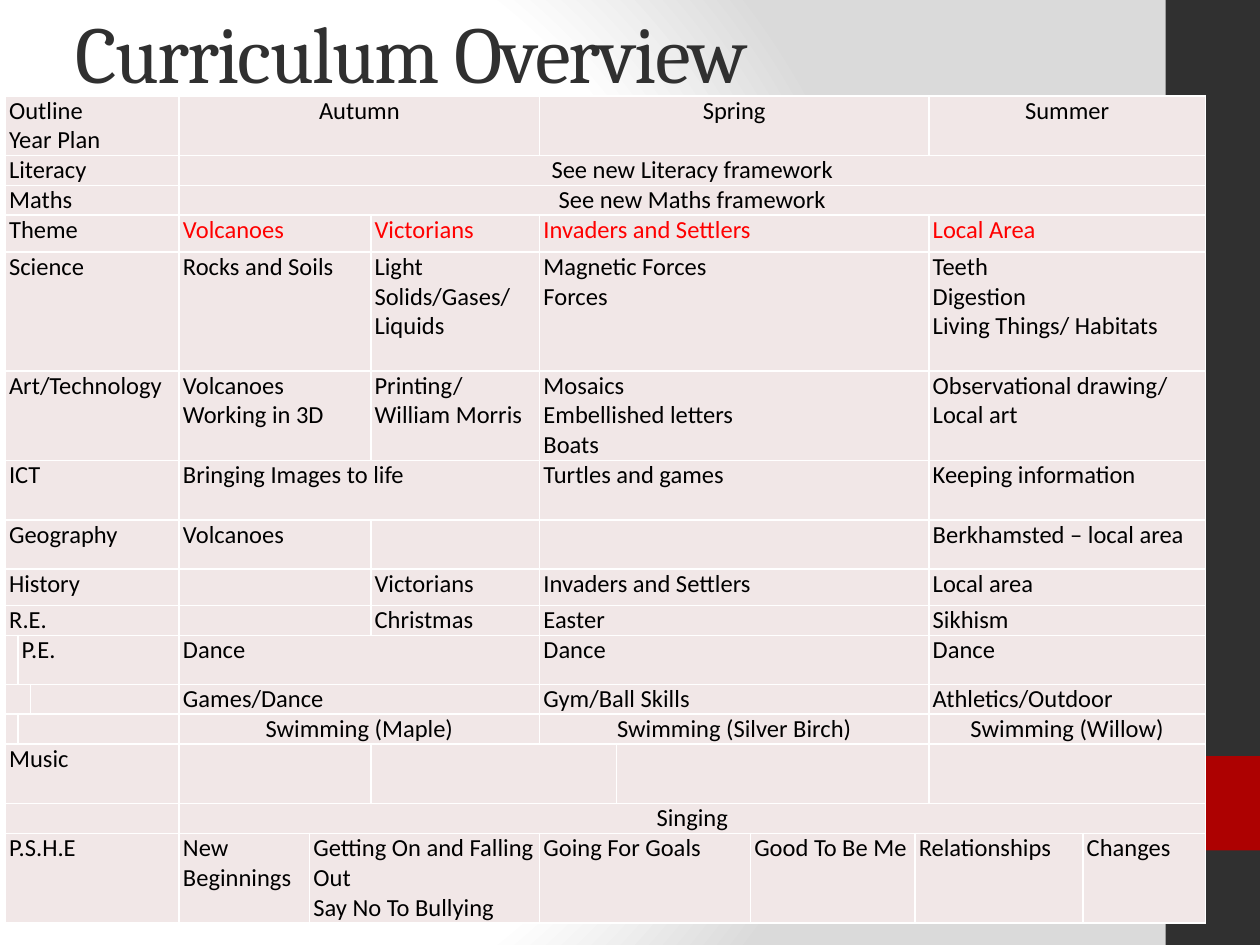
from lxml import etree
from pptx import Presentation
from pptx.dml.color import RGBColor
from pptx.enum.shapes import MSO_SHAPE
from pptx.enum.text import MSO_ANCHOR, MSO_AUTO_SIZE, PP_ALIGN
from pptx.oxml import parse_xml
from pptx.oxml.ns import nsdecls, qn
from pptx.util import Pt

RECT = MSO_SHAPE.RECTANGLE
MIDDLE = MSO_ANCHOR.MIDDLE
NO_FIT = MSO_AUTO_SIZE.NONE
LEFT, CENTER = PP_ALIGN.LEFT, PP_ALIGN.CENTER

COLORS = {"dark": "303030", "accent": "AD0101", "cell": "F1E7E7", "text": "000000",
          "theme": "FF0000", "white": "FFFFFF", "grey": "DADADA"}

# Column widths, and the columns at which the cells of a row start
WIDTHS = [5.5, 4, 85, 74.5, 35, 96.5, 44, 76.5, 94, 8, 88, 70]
YEAR = [0, 3]
TERMS = [0, 3, 6, 10]
HALVES = [0, 3, 5, 6, 10]

# Row: height, cell starts, texts, alignment and colour after the first column
ROWS = [
    (34, TERMS, ["Outline\nYear Plan", "Autumn", "Spring", "Summer"], CENTER, "text"),
    (17, YEAR, ["Literacy", "See new Literacy framework"], CENTER, "text"),
    (17, YEAR, ["Maths", "See new Maths framework"], CENTER, "text"),
    (21, HALVES, ["Theme", "Volcanoes", "Victorians", "Invaders and Settlers",
                  "Local Area"], LEFT, "theme"),
    (68, HALVES, ["Science", "Rocks and Soils", "Light\nSolids/Gases/\nLiquids",
                  "Magnetic Forces\nForces",
                  "Teeth\nDigestion\nLiving Things/ Habitats"], LEFT, "text"),
    (51, HALVES, ["Art/Technology", "Volcanoes\nWorking in 3D",
                  "Printing/\nWilliam Morris", "Mosaics\nEmbellished letters\nBoats",
                  "Observational drawing/\nLocal art"], LEFT, "text"),
    (34, TERMS, ["ICT", "Bringing Images to life", "Turtles and games",
                 "Keeping information"], LEFT, "text"),
    (28, HALVES, ["Geography", "Volcanoes", "", "", "Berkhamsted – local area"],
     LEFT, "text"),
    (21, HALVES, ["History", "", "Victorians", "Invaders and Settlers", "Local area"],
     LEFT, "text"),
    (17, HALVES, ["R.E.", "", "Christmas", "Easter", "Sikhism"], LEFT, "text"),
    (28, [0, 1, 3, 6, 10], ["", "P.E.", "Dance", "Dance", "Dance"], LEFT, "text"),
    (17, [0, 2, 3, 6, 10], ["", "", "Games/Dance", "Gym/Ball Skills",
                            "Athletics/Outdoor"], LEFT, "text"),
    (17, [0, 1, 3, 6, 10], ["", "", "Swimming (Maple)", "Swimming (Silver Birch)",
                            "Swimming (Willow)"], CENTER, "text"),
    (34, [0, 3, 5, 7, 10], ["Music", "", "", "", ""], LEFT, "text"),
    (17, YEAR, ["", "Singing"], CENTER, "text"),
    (51, [0, 3, 4, 6, 8, 9, 11],
     ["P.S.H.E", "New Beginnings", "Getting On and Falling Out\nSay No To Bullying",
      "Going For Goals", "Good To Be Me", "Relationships", "Changes"], LEFT, "text"),
]


def rgb(name):
    return RGBColor.from_string(COLORS[name])


class Deck:
    head, body = "Cambria", "Calibri"
    size = 14

    def __init__(self, wide, high):
        self.show = Presentation()
        self.show.slide_width, self.show.slide_height = Pt(wide), Pt(high)
        self.slide = self.show.slides.add_slide(self.show.slide_layouts[5])

    def backdrop(self):
        self.slide.background.fill.solid()
        props = self.slide.element.find(".//" + qn("p:bgPr"))
        stops = "".join(
            f'<a:gs pos="{pos}"><a:srgbClr val="{COLORS[name]}"/></a:gs>'
            for pos, name in [(0, "white"), (75000, "white"), (100000, "grey")])
        props.replace(props[0], parse_xml(
            f'<a:gradFill {nsdecls("a")} rotWithShape="1"><a:gsLst>{stops}</a:gsLst>'
            '<a:path path="circle"><a:fillToRect l="20000" t="50000" r="100000" '
            'b="50000"/></a:path></a:gradFill>'))

    def box(self, x, y, w, h, color):
        shape = self.slide.shapes.add_shape(RECT, Pt(x), Pt(y), Pt(w), Pt(h))
        shape.shadow.inherit = False
        shape.fill.solid()
        shape.fill.fore_color.rgb = rgb(color)
        shape.line.fill.background()

    def run(self, para, text, font, size, color):
        run = para.add_run()
        run.text = text
        run.font.name, run.font.size = font, Pt(size)
        run.font.color.rgb = rgb(color)
        return run

    def title(self, text, x, y, w, h):
        shape = self.slide.shapes.title
        shape.left, shape.top, shape.width, shape.height = Pt(x), Pt(y), Pt(w), Pt(h)
        frame = shape.text_frame
        frame.auto_size, frame.vertical_anchor = NO_FIT, MIDDLE
        para = frame.paragraphs[0]
        para.alignment = LEFT
        run = self.run(para, text, self.head, 46, "dark")
        run.font._element.set("spc", "-100")

    def table(self, x, y, widths, rows):
        high = sum(row[0] for row in rows)
        grid = self.slide.shapes.add_table(
            len(rows), len(widths), Pt(x), Pt(y), Pt(sum(widths)), Pt(high)).table
        grid.first_row = grid.horz_banding = False
        for col, width in zip(grid.columns, widths):
            col.width = Pt(width)
        for r, (height, starts, texts, align, color) in enumerate(rows):
            grid.rows[r].height = Pt(height)
            for c in range(len(widths)):
                self.cell(grid.cell(r, c))
            ends = starts[1:] + [len(widths)]
            for start, end, text in zip(starts, ends, texts):
                cell = grid.cell(r, start)
                if end - start > 1:
                    cell.merge(grid.cell(r, end - 1))
                if text:
                    first = start < 3
                    self.fill(cell, text, LEFT if first else align,
                              "text" if first else color)

    def cell(self, cell):
        cell.margin_left = cell.margin_right = Pt(2.2)
        cell.margin_top = cell.margin_bottom = 0
        props = cell._tc.get_or_add_tcPr()
        for side in "LRTB":
            props.append(parse_xml(
                f'<a:ln{side} {nsdecls("a")} w="12700"><a:solidFill>'
                f'<a:srgbClr val="{COLORS["white"]}"/></a:solidFill></a:ln{side}>'))
        cell.fill.solid()
        cell.fill.fore_color.rgb = rgb("cell")
        # The end mark sets the line height of an empty cell
        mark = etree.SubElement(cell.text_frame.paragraphs[0]._p, qn("a:endParaRPr"))
        mark.set("sz", str(self.size * 100))

    def fill(self, cell, text, align, color):
        frame = cell.text_frame
        for i, line in enumerate(text.split("\n")):
            para = frame.add_paragraph() if i else frame.paragraphs[0]
            para.alignment = align
            self.run(para, line, self.body, self.size, color)


def main():
    deck = Deck(720, 540)
    # Background and side band
    deck.backdrop()
    deck.box(666, 0, 54, 540, "dark")
    deck.box(666, 432, 54, 54, "accent")
    # Title and year plan
    deck.title("Curriculum Overview", 36, 9.5, 600, 39.5)
    deck.table(3, 54.75, WIDTHS, ROWS)
    deck.show.save("out.pptx")


if __name__ == "__main__":
    main()
